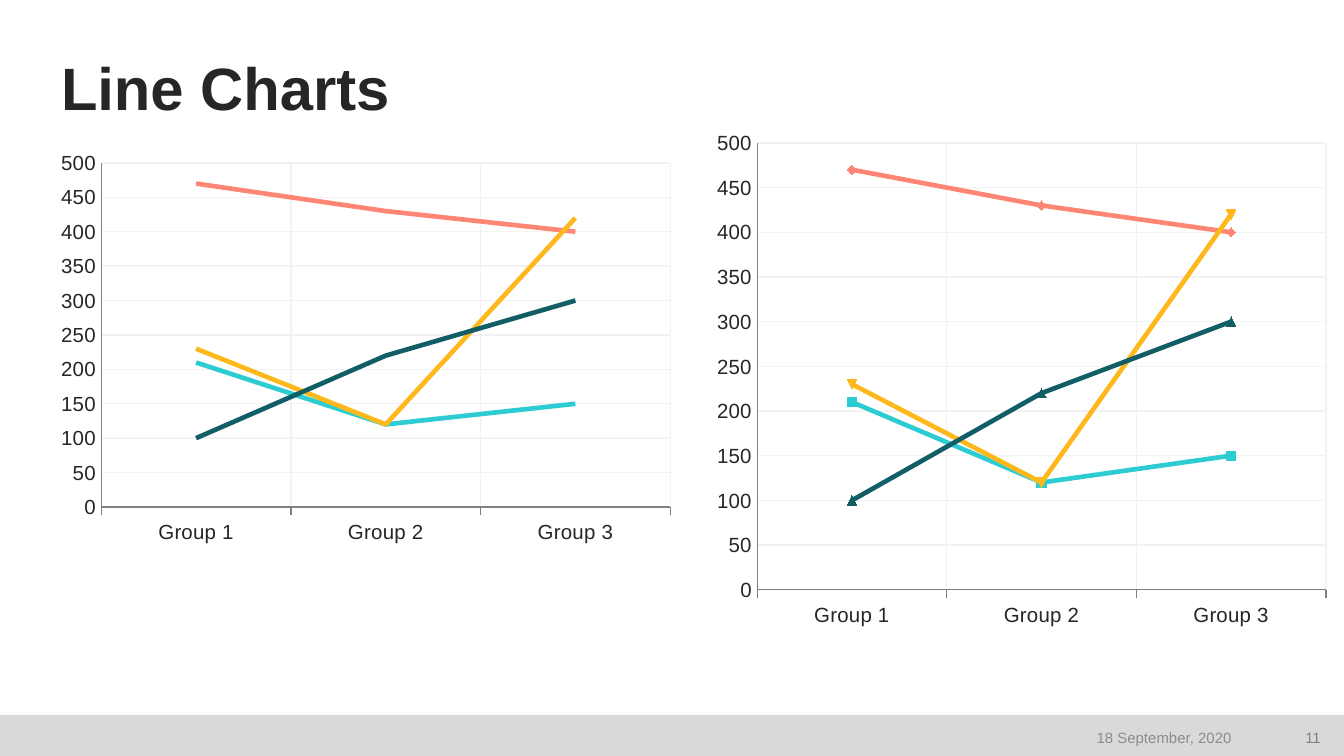
from collections import namedtuple
from dataclasses import dataclass

from lxml.etree import SubElement
from pptx import Presentation
from pptx.chart.data import CategoryChartData
from pptx.dml.color import RGBColor
from pptx.enum.chart import XL_CHART_TYPE, XL_MARKER_STYLE, XL_TICK_MARK
from pptx.enum.shapes import MSO_SHAPE
from pptx.enum.text import MSO_ANCHOR, PP_ALIGN
from pptx.oxml.ns import qn
from pptx.util import Emu, Pt

Box = namedtuple("Box", "left top width height")
EMU_PER_PX = 9144000 / 1344
SLIDE = Box(0, 0, 1344, 756)
CATEGORIES = ["Group 1", "Group 2", "Group 3"]
SERIES = {
    "Series 1": (210, 120, 150),
    "Series 2": (470, 430, 400),
    "Series 3": (230, 120, 420),
    "Series 4": (100, 220, 300),
}


@dataclass(frozen=True)
class Theme:
    """Colours, font and type sizes of the slide."""
    font: str = "Arial"
    text: str = "262626"
    date: str = "8C8C8C"
    number: str = "808080"
    band: str = "D9D9D9"
    grid: str = "F2F2F2"
    axis: str = "808080"
    series: tuple = ("2DCCD3", "FF8674", "FFB81C", "115E67")
    title_size: int = 32
    chart_size: int = 11
    footer_size: int = 8
    thin_line: float = 0.75
    series_line: float = 2.5
    marker_size: int = 5


THEME = Theme()


def px(length):
    """Turn pixels into EMU."""
    return Emu(round(length * EMU_PER_PX))


def place(box):
    """Return the box as four EMU lengths."""
    return [px(length) for length in box]


def style_line(line, color, width):
    """Set the colour and width of a line."""
    line.color.rgb = RGBColor.from_string(color)
    line.width = Pt(width)


def add_text(slide, box, text, size, color, anchor=MSO_ANCHOR.MIDDLE,
             align=PP_ALIGN.RIGHT, bold=False):
    """Add a one-line text box and return its shape."""
    shape = slide.shapes.add_textbox(*place(box))
    frame = shape.text_frame
    frame.word_wrap = True
    frame.vertical_anchor = anchor
    paragraph = frame.paragraphs[0]
    paragraph.alignment = align
    run = paragraph.add_run()
    run.text = text
    run.font.name = THEME.font
    run.font.size = Pt(size)
    run.font.bold = bold
    run.font.color.rgb = RGBColor.from_string(color)
    return shape


def add_title(slide, box, text):
    """Add the slide title, set at the bottom of the box."""
    shape = add_text(slide, box, text, THEME.title_size, THEME.text,
                     MSO_ANCHOR.BOTTOM, PP_ALIGN.LEFT, True)
    frame = shape.text_frame
    frame.margin_left = frame.margin_top = frame.margin_right = frame.margin_bottom = 0
    frame.paragraphs[0].line_spacing = 0.9


def add_footer(slide, box, date, number):
    """Add the footer band with the date and the slide number."""
    band = slide.shapes.add_shape(MSO_SHAPE.RECTANGLE, *place(box))
    band.shadow.inherit = False
    band.fill.solid()
    band.fill.fore_color.rgb = RGBColor.from_string(THEME.band)
    band.line.fill.background()
    for left, width, text, color in ((942, 303, date, THEME.date),
                                     (1284, 50, number, THEME.number)):
        text_box = Box(box.left + left, box.top + 5, width, 35)
        add_text(slide, text_box, text, THEME.footer_size, color)


def set_plot_box(chart, box, plot):
    """Fix the inner plot area, given relative to the chart box."""
    plot_area = chart.element.find(".//" + qn("c:plotArea"))
    layout = plot_area.find(qn("c:layout"))
    if layout is None:
        layout = SubElement(plot_area, qn("c:layout"))
        plot_area.insert(0, layout)
    manual = SubElement(layout, qn("c:manualLayout"))
    settings = {
        "layoutTarget": "inner", "xMode": "edge", "yMode": "edge",
        "x": plot.left / box.width, "y": plot.top / box.height,
        "w": plot.width / box.width, "h": plot.height / box.height,
    }
    for tag, value in settings.items():
        SubElement(manual, qn(f"c:{tag}")).set("val", str(value))


def add_line_chart(slide, box, plot, chart_type):
    """Add a line chart of all series, with markers if the type has them."""
    data = CategoryChartData()
    data.categories = CATEGORIES
    for name, values in SERIES.items():
        data.add_series(name, values)
    chart = slide.shapes.add_chart(chart_type, *place(box), data).chart
    chart.has_legend = False
    chart.has_title = False
    chart.font.name = THEME.font
    chart.font.size = Pt(THEME.chart_size)
    chart.font.color.rgb = RGBColor.from_string(THEME.text)
    chart.plots[0].vary_by_categories = False
    set_plot_box(chart, box, plot)

    for axis in (chart.category_axis, chart.value_axis):
        axis.has_major_gridlines = True
        style_line(axis.major_gridlines.format.line, THEME.grid, THEME.thin_line)
        style_line(axis.format.line, THEME.axis, THEME.thin_line)
        axis.minor_tick_mark = XL_TICK_MARK.NONE
    chart.category_axis.major_tick_mark = XL_TICK_MARK.OUTSIDE
    chart.value_axis.major_tick_mark = XL_TICK_MARK.NONE
    chart.value_axis.minimum_scale = 0
    chart.value_axis.maximum_scale = 500
    chart.value_axis.major_unit = 50

    for series, color in zip(chart.plots[0].series, THEME.series):
        series.smooth = False
        style_line(series.format.line, color, THEME.series_line)
        if chart_type == XL_CHART_TYPE.LINE_MARKERS:
            marker = series.marker
            marker.style = XL_MARKER_STYLE.AUTOMATIC
            marker.size = THEME.marker_size
            marker.format.fill.solid()
            marker.format.fill.fore_color.rgb = RGBColor.from_string(color)
            marker.format.line.color.rgb = RGBColor.from_string(color)


def main():
    """Build the slide and save it."""
    presentation = Presentation()
    presentation.slide_width = px(SLIDE.width)
    presentation.slide_height = px(SLIDE.height)
    slide = presentation.slides.add_slide(presentation.slide_layouts[6])
    add_footer(slide, Box(0, 715, SLIDE.width, 41), "18 September, 2020", "11")
    add_title(slide, Box(61, 53, 1223, 70), "Line Charts")
    add_line_chart(slide, Box(61, 150, 610, 394), Box(39, 13, 571, 346),
                   XL_CHART_TYPE.LINE)
    add_line_chart(slide, Box(717, 126, 610, 504), Box(38, 17, 571, 447),
                   XL_CHART_TYPE.LINE_MARKERS)
    presentation.save("out.pptx")


if __name__ == "__main__":
    main()
